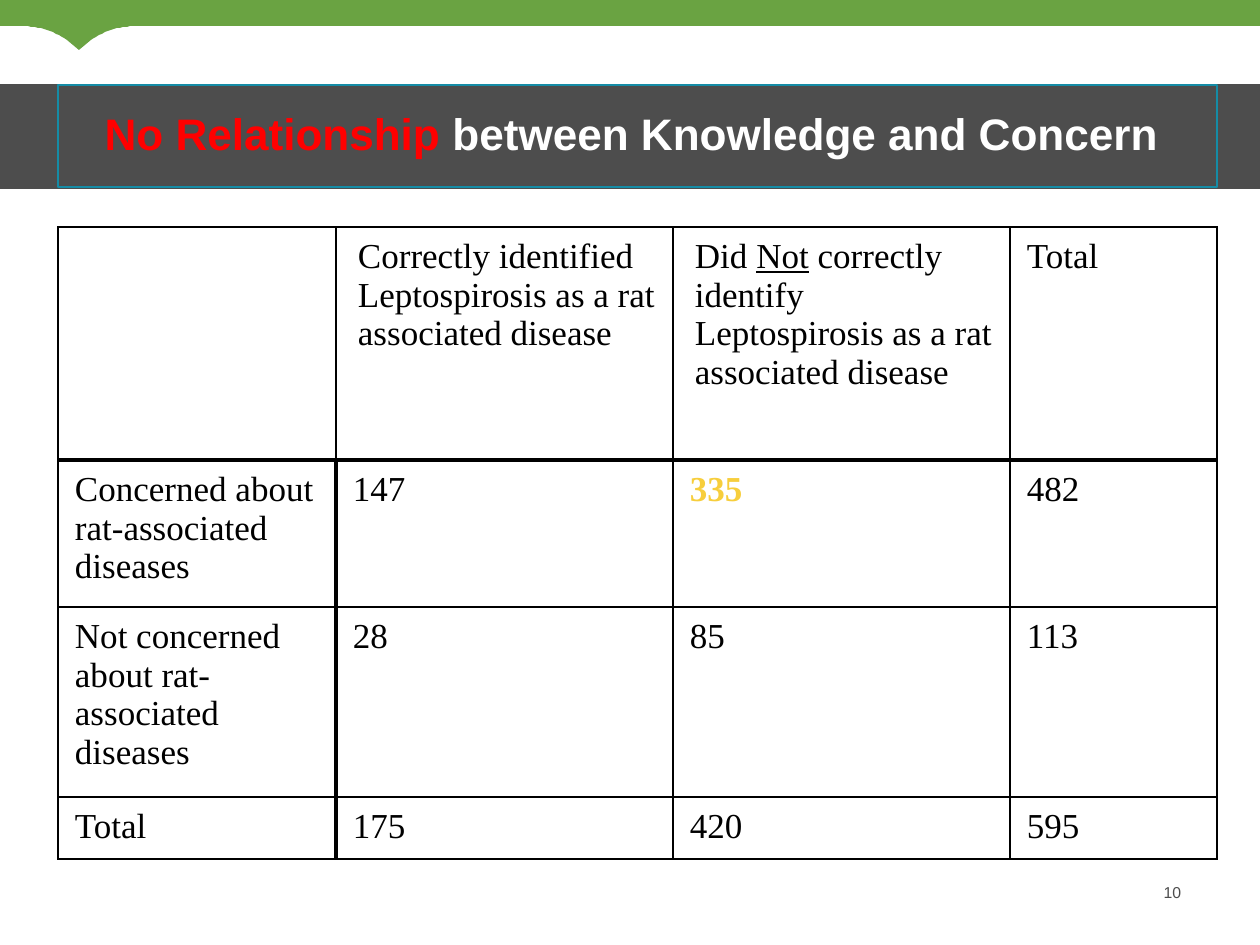
import pptx
import pptx.dml.color
import pptx.enum.shapes
import pptx.enum.text
import pptx.oxml.ns
import pptx.util
from lxml import etree

SCALE = 914400 / 126
COLORS = {
    "green": "6AA342",
    "gray": "4D4D4D",
    "teal": "158CA6",
    "red": "FF0000",
    "white": "FFFFFF",
    "black": "000000",
    "gold": "F7CE3C",
}
ANCHOR = pptx.enum.text.MSO_ANCHOR
ALIGN = pptx.enum.text.PP_ALIGN


def px(length):
    return pptx.util.Emu(round(length * SCALE))


def color(name):
    return pptx.dml.color.RGBColor.from_string(COLORS[name])


def set_values(target, values):
    for name, value in values.items():
        setattr(target, name, value)


def curve(start, control_1, control_2, end, steps=16):
    for step in range(1, steps + 1):
        t = step / steps
        weights = ((1 - t) ** 3, 3 * t * (1 - t) ** 2, 3 * t**2 * (1 - t), t**3)
        corners = (start, control_1, control_2, end)
        yield tuple(sum(w * c[axis] for w, c in zip(weights, corners)) for axis in (0, 1))


class SlideBuilder:
    title_font = {"name": "Arial", "size": pptx.util.Pt(25.2), "bold": True}
    table_font = {"name": "Times New Roman", "size": pptx.util.Pt(20), "bold": False}
    number_font = {"name": "Arial", "size": pptx.util.Pt(9)}

    def __init__(self, presentation):
        self.slide = presentation.slides.add_slide(presentation.slide_layouts[5])
        self.shapes = self.slide.shapes

    def add_runs(self, paragraph, runs, font):
        for text, color_name, extra in runs:
            run = paragraph.add_run()
            run.text = text
            set_values(run.font, {**font, **extra})
            run.font.color.rgb = color(color_name)

    def paint(self, shape, fill, line):
        shape.shadow.inherit = False
        shape.fill.solid()
        shape.fill.fore_color.rgb = color(fill)
        if line:
            shape.line.color.rgb = color(line)
            shape.line.width = pptx.util.Pt(1)
        else:
            shape.line.fill.background()

    def band(self, left, top, width, height, fill):
        kind = pptx.enum.shapes.MSO_SHAPE.RECTANGLE
        shape = self.shapes.add_shape(kind, px(left), px(top), px(width), px(height))
        self.paint(shape, fill, fill)

    def outline(self, points, fill):
        builder = self.shapes.build_freeform(*points[0], scale=SCALE)
        builder.add_line_segments(points[1:], close=True)
        self.paint(builder.convert_to_shape(), fill, None)

    def title(self, left, top, width, height, runs):
        title = self.shapes.title
        set_values(title, {"left": px(left), "top": px(top), "width": px(width), "height": px(height)})
        title.line.color.rgb = color("teal")
        title.line.width = pptx.util.Pt(0.75)
        frame = title.text_frame
        set_values(frame, {
            "word_wrap": True,
            "auto_size": pptx.enum.text.MSO_AUTO_SIZE.NONE,
            "vertical_anchor": ANCHOR.MIDDLE,
        })
        set_values(frame.paragraphs[0], {"alignment": ALIGN.CENTER, "line_spacing": 0.9})
        self.add_runs(frame.paragraphs[0], runs, self.title_font)
        self.shapes._spTree.append(title._element)

    def page_number(self, left, top, width, height, text):
        box = self.shapes.add_textbox(px(left), px(top), px(width), px(height))
        frame = box.text_frame
        set_values(frame, {"margin_left": 0, "margin_top": 0, "margin_right": 0, "margin_bottom": 0, "word_wrap": True})
        frame.paragraphs[0].alignment = ALIGN.RIGHT
        self.add_runs(frame.paragraphs[0], [(text, "gray", {})], self.number_font)

    def border(self, cell, side, width):
        properties = cell._tc.get_or_add_tcPr()
        line = etree.SubElement(properties, pptx.oxml.ns.qn(f"a:ln{side}"), w=str(pptx.util.Pt(width)))
        fill = etree.SubElement(line, pptx.oxml.ns.qn("a:solidFill"))
        etree.SubElement(fill, pptx.oxml.ns.qn("a:srgbClr"), val=COLORS["black"])

    def table(self, left, top, widths, heights, rows):
        frame = self.shapes.add_table(
            len(heights), len(widths), px(left), px(top), px(sum(widths)), px(sum(heights)))
        table = frame.table
        set_values(table, {"first_row": False, "horz_banding": False})
        for column, width in zip(table.columns, widths):
            column.width = px(width)
        for row, height in zip(table.rows, heights):
            row.height = px(height)
        for row_index, row in enumerate(rows):
            for column_index, runs in enumerate(row):
                self.cell(table.cell(row_index, column_index), row_index, column_index, runs)

    def cell(self, cell, row, column, runs):
        margin = px(10)
        set_values(cell, {
            "margin_left": margin, "margin_right": margin,
            "margin_top": margin, "margin_bottom": margin,
            "vertical_anchor": ANCHOR.TOP,
        })
        heavy = {"L": row > 0 and column == 1, "R": row > 0 and column == 0, "T": row == 1, "B": row == 0}
        for side, is_heavy in heavy.items():
            self.border(cell, side, 2.25 if is_heavy else 1)
        cell.fill.background()
        paragraph = cell.text_frame.paragraphs[0]
        indent = px(12 if row == 0 and column in (1, 2) else 7)
        paragraph._p.get_or_add_pPr().set("marL", str(indent))
        self.add_runs(paragraph, runs, self.table_font)


def plain(text):
    return [(text, "black", {})]


def main():
    presentation = pptx.Presentation()
    presentation.slide_width = px(1260)
    presentation.slide_height = px(945)
    builder = SlideBuilder(presentation)

    tip = 79
    right_half = [(141, 26), *curve((141, 26), (121, 26), (105, 30), (91, 40)), (85, 45)]
    left_half = [(2 * tip - x, y) for x, y in reversed(right_half)]
    builder.outline(
        [(0, 0), (1260, 0), (1260, 26), *right_half, (tip, 50), *left_half, (0, 26)], "green")
    builder.band(0, 85, 1260, 103, "gray")
    builder.title(58, 85, 1159, 102, [
        ("No Relationship ", "red", {}),
        ("between Knowledge and Concern ", "white", {}),
    ])

    rows = [
        [
            [],
            plain("Correctly identified Leptospirosis as a rat associated disease"),
            [
                ("Did ", "black", {}),
                ("Not", "black", {"underline": True}),
                (" correctly identify Leptospirosis as a rat associated disease", "black", {}),
            ],
            plain("Total"),
        ],
        [
            plain("Concerned about rat-associated diseases"),
            plain("147"),
            [("335", "gold", {"bold": True})],
            plain("482"),
        ],
        [plain(text) for text in ("Not concerned about rat-associated diseases", "28", "85", "113")],
        [plain(text) for text in ("Total", "175", "420", "595")],
    ]
    builder.table(58, 227, [278, 337, 337, 207], [233, 147, 190, 62], rows)
    builder.page_number(1138, 883, 43, 19, "10")
    presentation.save("out.pptx")


if __name__ == "__main__":
    main()
